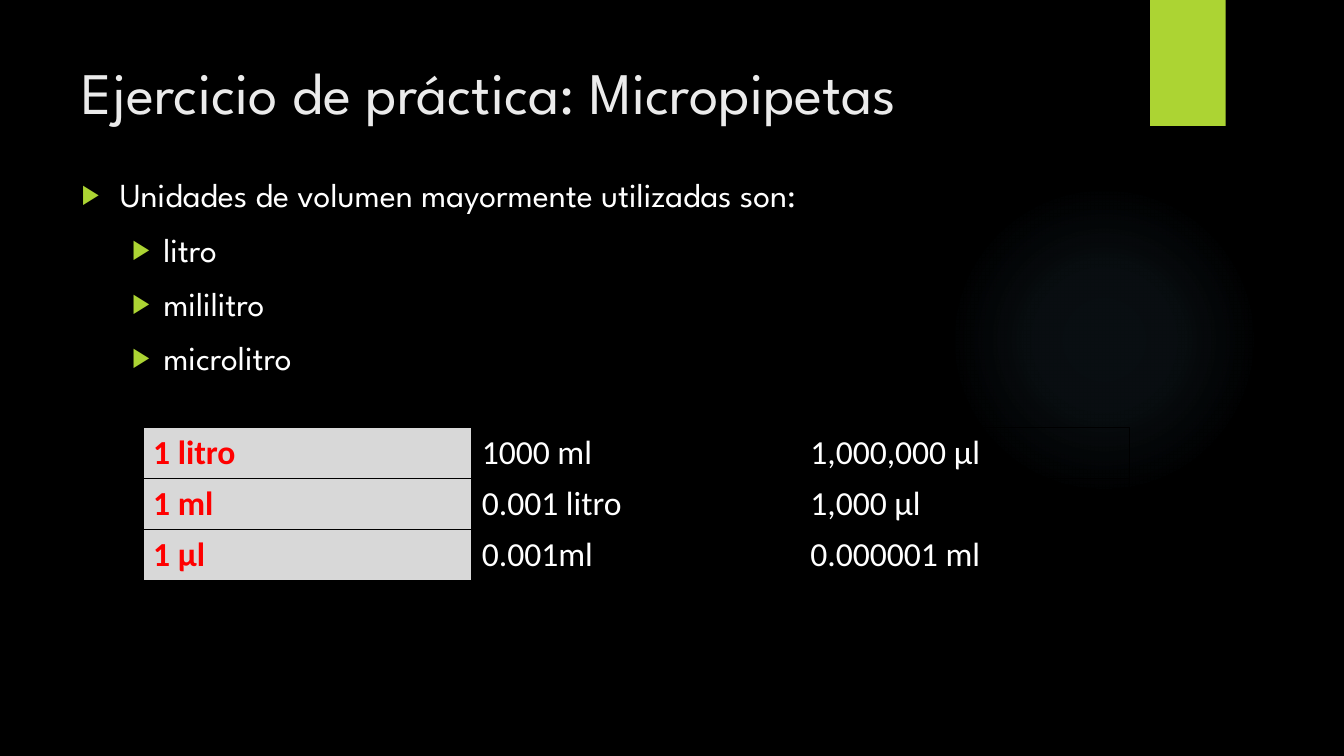
import dataclasses
import typing

import pptx
import pptx.dml.color
import pptx.enum.shapes
import pptx.enum.text
import pptx.oxml
import pptx.oxml.ns
import pptx.util

WIDE, HIGH = pptx.util.Inches(13.333), pptx.util.Inches(7.5)
COLS, ROWS = 40, 30
HEAD, TEXT = "League Spartan", "Calibri"
BLACK, WHITE, PALE, LIME = "000000", "FFFFFF", "EBEBEB", "ACD433"
RED, GREY, SKY = "FF0000", "D8D8D8", "7AC4F0"
SPACE = pptx.oxml.ns.nsdecls("a")


@dataclasses.dataclass
class Box:
    col: float
    row: float
    wide: float
    high: float

    def place(self) -> tuple[int, int, int, int]:
        return (
            int(WIDE * self.col / COLS),
            int(HIGH * self.row / ROWS),
            int(WIDE * self.wide / COLS),
            int(HIGH * self.high / ROWS),
        )


@dataclasses.dataclass
class Item:
    text: str
    level: int = 1
    left: float = 0.81
    hang: float = 0.31
    above: int = 10


GLOW = Box(28.23, 7.32, 9.24, 12.32)
BAR = Box(34.23, 0, 2.25, 5)
TITLE = Box(2.13, 2, 30.87, 6.12)
BODY = Box(2.13, 6.72, 35.73, 18.36)
GRID = Box(4.26, 16.96, 29.34, 6)

ITEMS = [
    Item("Unidades de volumen mayormente utilizadas son:", 0, 0.38, 0.38, 0),
    Item("litro"),
    Item("mililitro"),
    Item("microlitro"),
]
UNITS = [
    ("1 litro", "1000 ml", "1,000,000 μl"),
    ("1 ml", "0.001 litro", "1,000 μl"),
    ("1 μl", "0.001ml", "0.000001 ml"),
]


def paint(code: str) -> pptx.dml.color.RGBColor:
    return pptx.dml.color.RGBColor.from_string(code)


def node(xml: str) -> typing.Any:
    return pptx.oxml.parse_xml(f"<a:root {SPACE}>{xml}</a:root>")[0]


def write(par: typing.Any, text: str, *, size: float = 24, font: str = TEXT,
          tint: str = WHITE, bold: bool = False) -> None:
    run = par.add_run()
    run.text = text
    run.font.size = pptx.util.Pt(size)
    run.font.name = font
    run.font.bold = bold
    run.font.color.rgb = paint(tint)


def draw(slide: typing.Any, kind: typing.Any, box: Box, tint: str) -> typing.Any:
    shape = slide.shapes.add_shape(kind, *box.place())
    shape.shadow.inherit = False
    shape.fill.solid()
    shape.fill.fore_color.rgb = paint(tint)
    shape.line.fill.background()
    return shape


def shine(shape: typing.Any) -> None:
    stops = "".join(
        f'<a:gs pos="{at * 1000}"><a:srgbClr val="{SKY}">'
        f'<a:alpha val="{part * 1000}"/></a:srgbClr></a:gs>'
        for at, part in ((0, 7), (36, 6), (69, 0))
    )
    fill = node(
        f'<a:gradFill><a:gsLst>{stops}</a:gsLst><a:path path="circle">'
        '<a:fillToRect l="50000" t="50000" r="50000" b="50000"/></a:path></a:gradFill>'
    )
    props = shape._element.spPr
    props.replace(props.find(pptx.oxml.ns.qn("a:solidFill")), fill)


def shade(shape: typing.Any) -> None:
    blur, gap = pptx.util.Pt(3), pptx.util.Pt(2)
    shape._element.spPr.find(pptx.oxml.ns.qn("a:effectLst")).append(node(
        f'<a:outerShdw blurRad="{blur}" dist="{gap}" dir="5400000" rotWithShape="0">'
        f'<a:srgbClr val="{BLACK}"><a:alpha val="45000"/></a:srgbClr></a:outerShdw>'
    ))


def settle(slide: typing.Any, shape: typing.Any, box: Box) -> typing.Any:
    shape.left, shape.top, shape.width, shape.height = box.place()
    slide.shapes._spTree.append(shape._element)
    frame = shape.text_frame
    frame.word_wrap = True
    frame.auto_size = pptx.enum.text.MSO_AUTO_SIZE.NONE
    frame.vertical_anchor = pptx.enum.text.MSO_ANCHOR.TOP
    return frame


def mark(par: typing.Any, item: Item) -> None:
    par.level = item.level
    props = par._p.get_or_add_pPr()
    props.set("marL", str(pptx.util.Inches(item.left)))
    props.set("indent", str(-pptx.util.Inches(item.hang)))
    for xml in (
        f'<a:buClr><a:srgbClr val="{LIME}"/></a:buClr>',
        '<a:buSzPct val="80000"/>',
        '<a:buFont typeface="Arial"/>',
        '<a:buChar char="▶"/>',
    ):
        props.append(node(xml))
    par.space_before = pptx.util.Pt(item.above)


def edge(cell: typing.Any) -> None:
    props = cell._tc.get_or_add_tcPr()
    for spot, side in enumerate("LRTB"):
        props.insert(spot, node(
            f'<a:ln{side} w="{pptx.util.Pt(0.5)}"><a:solidFill>'
            f'<a:srgbClr val="{BLACK}"/></a:solidFill></a:ln{side}>'
        ))


def chart(slide: typing.Any) -> None:
    table = slide.shapes.add_table(len(UNITS), len(UNITS[0]), *GRID.place()).table
    table.first_row = table.horz_banding = False
    for row, texts in enumerate(UNITS):
        for col, text in enumerate(texts):
            cell, lead = table.cell(row, col), col == 0
            cell.vertical_anchor = pptx.enum.text.MSO_ANCHOR.MIDDLE
            if lead:
                cell.fill.solid()
                cell.fill.fore_color.rgb = paint(GREY)
            else:
                cell.fill.background()
            edge(cell)
            write(cell.text_frame.paragraphs[0], text,
                  tint=RED if lead else WHITE, bold=lead)


def main() -> None:
    deck = pptx.Presentation()
    deck.slide_width, deck.slide_height = WIDE, HIGH
    slide = deck.slides.add_slide(deck.slide_layouts[1])
    slide.background.fill.solid()
    slide.background.fill.fore_color.rgb = paint(BLACK)
    kinds = pptx.enum.shapes.MSO_SHAPE
    shine(draw(slide, kinds.OVAL, GLOW, SKY))
    shade(draw(slide, kinds.RECTANGLE, BAR, LIME))

    title = settle(slide, slide.shapes.title, TITLE).paragraphs[0]
    title.alignment = pptx.enum.text.PP_ALIGN.LEFT
    write(title, "Ejercicio de práctica: Micropipetas", size=42, font=HEAD, tint=PALE)

    body = settle(slide, slide.placeholders[1], BODY)
    for spot, item in enumerate(ITEMS):
        par = body.add_paragraph() if spot else body.paragraphs[0]
        mark(par, item)
        write(par, item.text, font=HEAD)
    chart(slide)
    deck.save("out.pptx")


if __name__ == "__main__":
    main()
